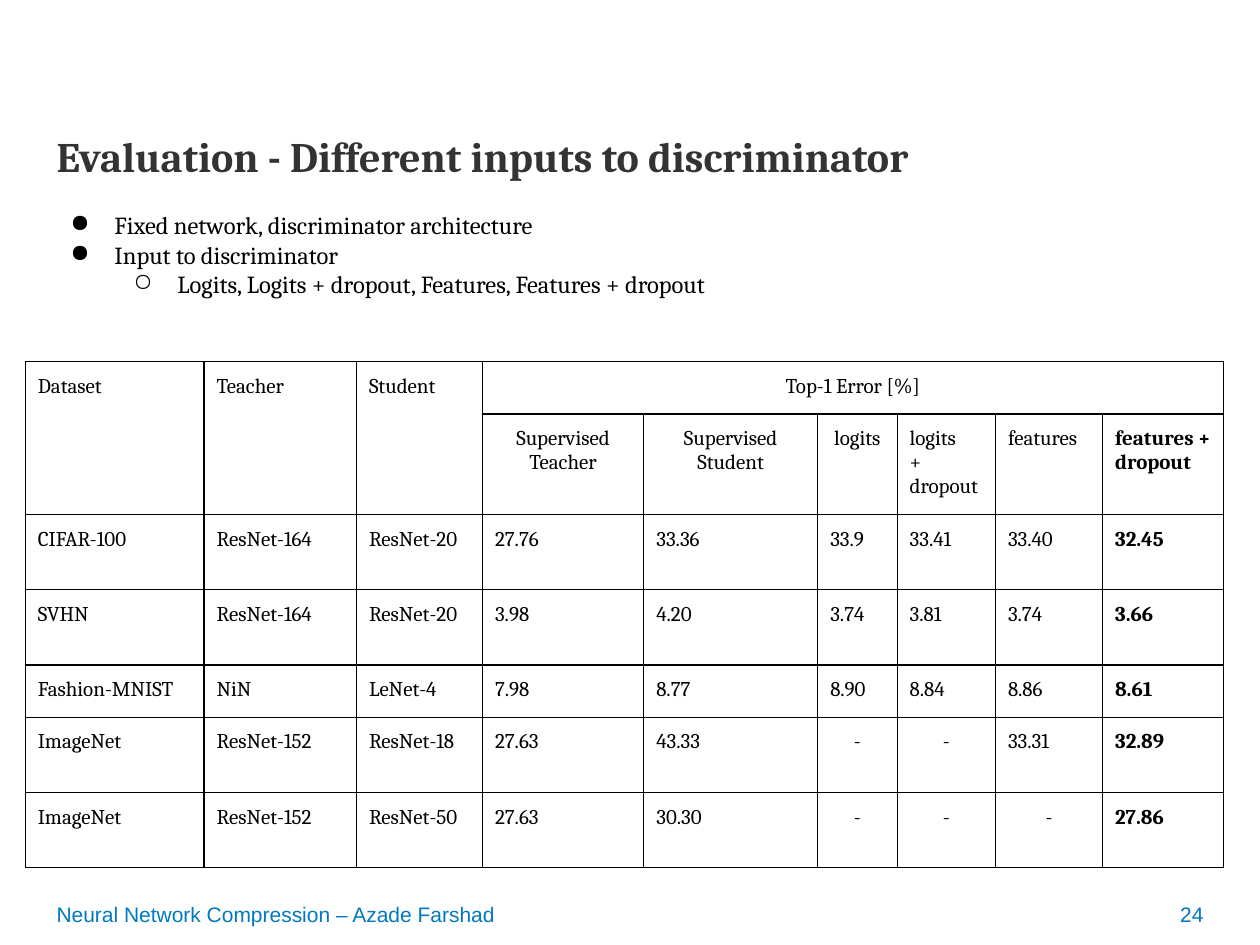
from lxml import etree
from pptx import Presentation
from pptx.dml.color import RGBColor
from pptx.enum.text import MSO_ANCHOR, PP_ALIGN
from pptx.oxml.ns import qn
from pptx.util import Pt

LEFT, CENTER, RIGHT = PP_ALIGN.LEFT, PP_ALIGN.CENTER, PP_ALIGN.RIGHT
TOP, MIDDLE = MSO_ANCHOR.TOP, MSO_ANCHOR.MIDDLE

COLORS = {"title": "333333", "body": "000000", "footer": "0079C1"}
FORMATS = {
    "title": {"name": "Cambria", "size": Pt(24), "bold": True},
    "bullet": {"name": "Cambria", "size": Pt(14), "bold": False},
    "cell": {"name": "Cambria", "size": Pt(12), "bold": False},
    "best": {"name": "Cambria", "size": Pt(12), "bold": True},
    "footer": {"name": "Arial", "size": Pt(12), "bold": False},
}

LABELS = [
    ("Neural Network Compression – Azade Farshad", "footer", (25.2, 510.5, 493.2, 23.8), LEFT, MIDDLE),
    ("24", "footer", (649.4, 510.5, 45.4, 23.8), RIGHT, MIDDLE),
    ("Evaluation - Different inputs to discriminator", "title", (25.2, 71.3, 668.9, 68.4), LEFT, TOP),
]
BULLETS = [
    (0, "Fixed network, discriminator architecture"),
    (0, "Input to discriminator"),
    (1, "Logits, Logits + dropout, Features, Features + dropout"),
]
BULLET_MARKS = ["●", "○"]
BULLET_BOX = (22.3, 113, 668.9, 85)

RESULTS = [
    ["Dataset", "Teacher", "Student", "Top-1 Error [%]", "", "", "", "", ""],
    ["", "", "", "Supervised Teacher", "Supervised Student", "logits", "logits\n+ dropout",
     "features", "features + dropout"],
    ["CIFAR-100", "ResNet-164", "ResNet-20", "27.76", "33.36", "33.9", "33.41", "33.40", "32.45"],
    ["SVHN", "ResNet-164", "ResNet-20", "3.98", "4.20", "3.74", "3.81", "3.74", "3.66"],
    ["Fashion-MNIST", "NiN", "LeNet-4", "7.98", "8.77", "8.90", "8.84", "8.86", "8.61"],
    ["ImageNet", "ResNet-152", "ResNet-18", "27.63", "43.33", "-", "-", "33.31", "32.89"],
    ["ImageNet", "ResNet-152", "ResNet-50", "27.63", "30.30", "-", "-", "-", "27.86"],
]
CENTERED = {"Top-1 Error [%]", "Supervised Teacher", "Supervised Student", "logits", "-"}
MERGES = [((0, 0), (1, 0)), ((0, 1), (1, 1)), ((0, 2), (1, 2)), ((0, 3), (0, 8))]
COLUMN_WIDTHS = [102.2, 87.1, 72, 92.2, 99.4, 45.4, 56.2, 61.2, 69.1]
ROW_HEIGHTS = [30, 56, 42.9, 42.9, 30, 42.9, 42.9]
TABLE_CORNER = (14.4, 206.6)
BORDER_WIDTH = 0.75


def write(para, text, style, align=LEFT):
    para.alignment = align
    span = para.add_run()
    span.text = text
    for attribute, value in FORMATS[style].items():
        setattr(span.font, attribute, value)
    span.font.color.rgb = RGBColor.from_string(COLORS.get(style, COLORS["body"]))


def add_box(page, place, anchor=TOP, inset=3.6):
    frame = page.shapes.add_textbox(*map(Pt, place)).text_frame
    frame.word_wrap = True
    frame.vertical_anchor = anchor
    frame.margin_top = frame.margin_bottom = Pt(inset)
    return frame


def add_bullet(para, level):
    para.level = level
    properties = para._p.get_or_add_pPr()
    properties.set("marL", str(Pt(36 * (level + 1))))
    properties.set("indent", str(Pt(-25.2)))
    color = etree.SubElement(properties, qn("a:buClr"))
    etree.SubElement(color, qn("a:srgbClr"), val=COLORS["body"])
    etree.SubElement(properties, qn("a:buChar"), char=BULLET_MARKS[level])


def add_borders(cell):
    properties = cell._tc.get_or_add_tcPr()
    for position, side in enumerate(("lnL", "lnR", "lnT", "lnB")):
        line = etree.Element(qn(f"a:{side}"), w=str(Pt(BORDER_WIDTH)))
        fill = etree.SubElement(line, qn("a:solidFill"))
        etree.SubElement(fill, qn("a:srgbClr"), val=COLORS["body"])
        properties.insert(position, line)


def add_results(page):
    size = (sum(COLUMN_WIDTHS), sum(ROW_HEIGHTS))
    table = page.shapes.add_table(len(RESULTS), len(COLUMN_WIDTHS),
                                  *map(Pt, TABLE_CORNER + size)).table
    table.first_row = table.horz_banding = False
    for column, width in zip(table.columns, COLUMN_WIDTHS):
        column.width = Pt(width)
    for row, height in zip(table.rows, ROW_HEIGHTS):
        row.height = Pt(height)
    for start, end in MERGES:
        table.cell(*start).merge(table.cell(*end))
    last = len(COLUMN_WIDTHS) - 1
    for r, values in enumerate(RESULTS):
        for c, text in enumerate(values):
            cell = table.cell(r, c)
            cell.fill.background()
            add_borders(cell)
            for side in ("left", "right", "top", "bottom"):
                setattr(cell, f"margin_{side}", Pt(7.2))
            if not text:
                continue
            frame = cell.text_frame
            for i, line in enumerate(text.split("\n")):
                para = frame.add_paragraph() if i else frame.paragraphs[0]
                write(para, line, "best" if c == last else "cell",
                      CENTER if text in CENTERED else LEFT)


def main():
    deck = Presentation()
    deck.slide_width, deck.slide_height = Pt(720), Pt(540)
    page = deck.slides.add_slide(deck.slide_layouts[6])
    for text, style, place, align, anchor in LABELS:
        write(add_box(page, place, anchor).paragraphs[0], text, style, align)
    add_results(page)
    frame = add_box(page, BULLET_BOX, inset=7.2)
    for i, (level, text) in enumerate(BULLETS):
        para = frame.add_paragraph() if i else frame.paragraphs[0]
        add_bullet(para, level)
        write(para, text, "bullet")
    deck.save("out.pptx")


if __name__ == "__main__":
    main()
